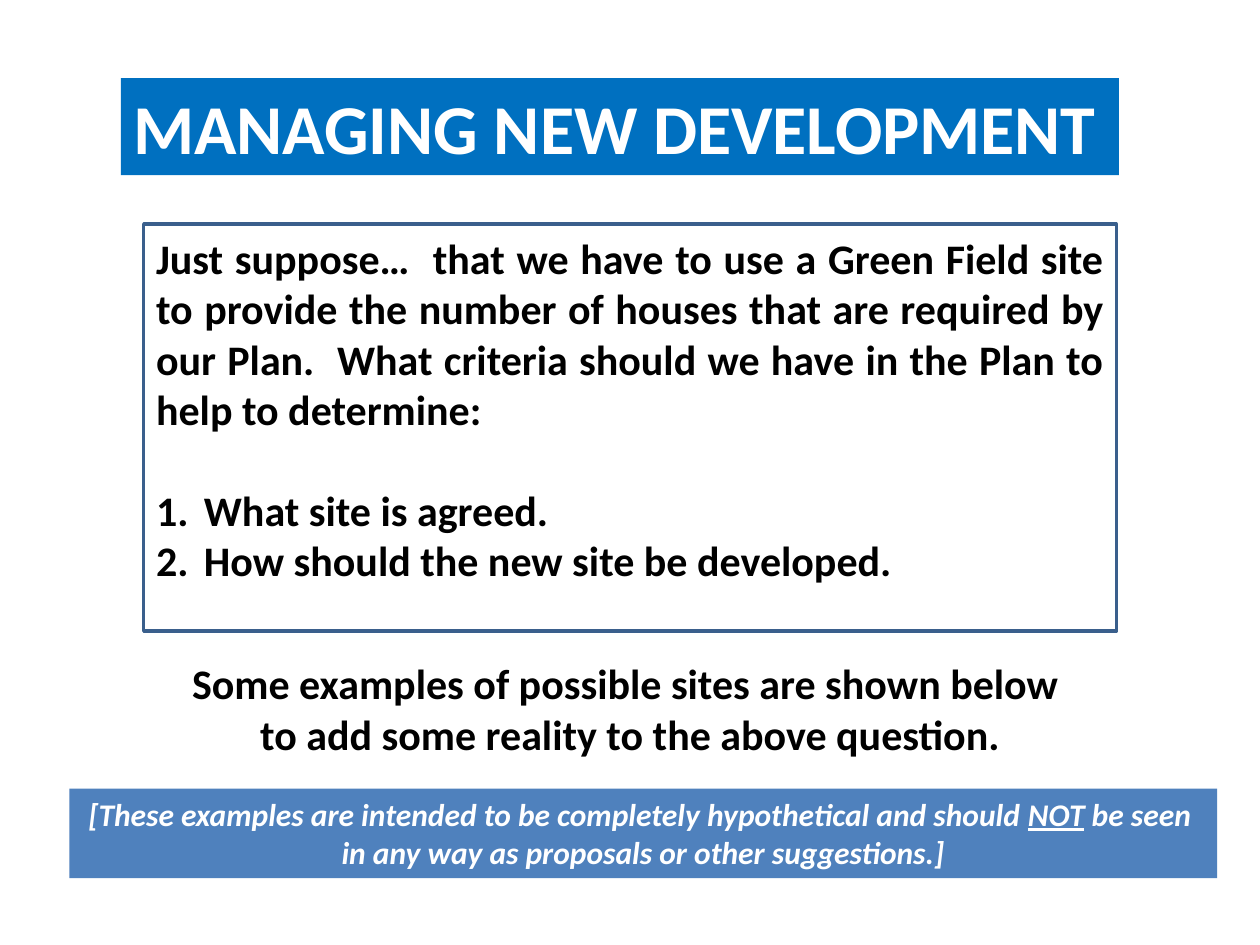
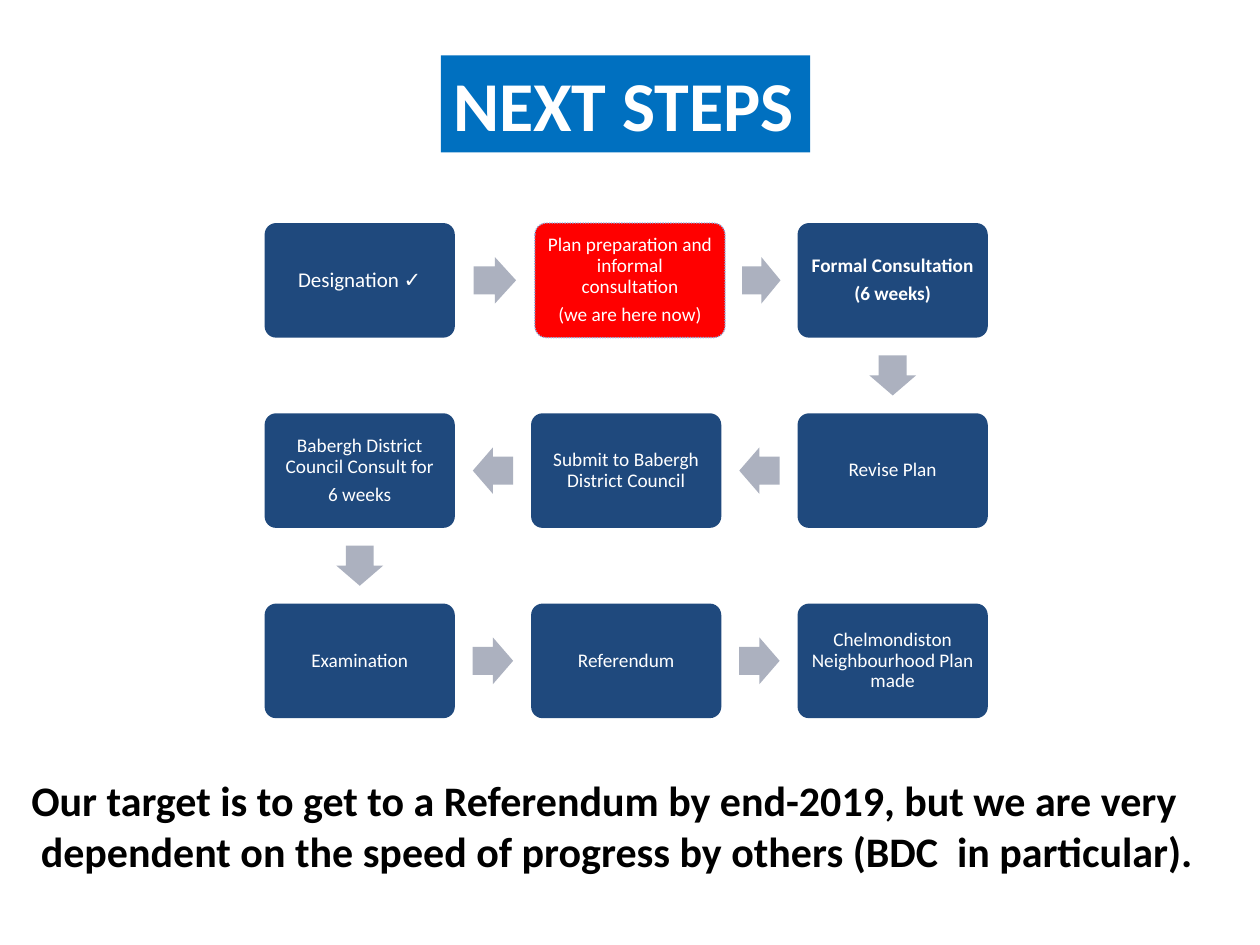
import pptx
import pptx.util
import pptx.dml.color
import pptx.enum.dml
import pptx.enum.shapes
import pptx.enum.text
import pptx.oxml

Inches, Pt = pptx.util.Inches, pptx.util.Pt
RGBColor = pptx.dml.color.RGBColor
SHAPE = pptx.enum.shapes.MSO_SHAPE
ALIGN = pptx.enum.text.PP_ALIGN
ANCHOR = pptx.enum.text.MSO_ANCHOR

FONT = "Calibri"
WHITE = RGBColor(0xFF, 0xFF, 0xFF)
BLACK = RGBColor(0, 0, 0)
TITLE_BLUE = RGBColor(0x00, 0x70, 0xC0)
NOTE_BLUE = RGBColor(0x4F, 0x81, 0xBD)
FRAME_BLUE = RGBColor(0x3A, 0x5F, 0x8C)
STEP_BLUE = RGBColor(0x1F, 0x49, 0x7D)
CURRENT_RED = RGBColor(0xFF, 0, 0)
CURRENT_LINE = RGBColor(0x8E, 0xB4, 0xE3)
ARROW_GREY = RGBColor(0xAC, 0xB1, 0xBF)

STEP_W, STEP_H = 1.51, 0.91
ARROW_BREADTH = 0.37
ARROW_SHARE = 0.53  # arrow length as a share of the gap it crosses

# Steps in order: column shift, font size, bold, paragraphs
STEPS = [
    (0, 12, False, ["Designation ✓"]),
    (0.03, 11, False, ["Plan preparation and informal consultation", "(we are here now)"]),
    (0, 11, True, ["Formal Consultation", "(6 weeks)"]),
    (0, 11, False, ["Revise Plan"]),
    (0, 11, False, ["Submit to Babergh District Council"]),
    (0, 11, False, ["Babergh District Council Consult for", "6 weeks"]),
    (0, 11, False, ["Examination"]),
    (0, 11, False, ["Referendum"]),
    (0, 11, False, ["Chelmondiston Neighbourhood Plan made"]),
]
CURRENT_STEP = 1


def add_box(slide, kind, box, fill=None):
    s = slide.shapes.add_shape(kind, *[Inches(v) for v in box])
    s.shadow.inherit = False
    s.line.fill.background()
    if fill is None:
        s.fill.background()
    else:
        s.fill.solid()
        s.fill.fore_color.rgb = fill
    return s


def add_run(p, text, size, color, bold=True, italic=False, underline=False):
    r = p.add_run()
    r.text = text
    f = r.font
    f.name, f.size, f.bold = FONT, Pt(size), bold
    f.italic, f.underline = italic, underline
    f.color.rgb = color


def write(s, lines, size, color, align=ALIGN.LEFT, anchor=ANCHOR.TOP, bold=True):
    """Fill a shape with one paragraph for each line of text."""
    tf = s.text_frame
    tf.word_wrap = True
    tf.vertical_anchor = anchor
    for i, line in enumerate(lines):
        p = tf.paragraphs[0] if i == 0 else tf.add_paragraph()
        p.alignment = align
        add_run(p, line, size, color, bold)
    return tf


def add_title(slide, text, box):
    write(add_box(slide, SHAPE.RECTANGLE, box, TITLE_BLUE), [text], 40, WHITE)


def add_statement(slide, lines, box, align):
    s = slide.shapes.add_textbox(*[Inches(v) for v in box])
    write(s, lines, 24, BLACK, align)


def number_paragraph(p):
    pPr = p._p.get_or_add_pPr()
    pPr.set("marL", str(Inches(0.38)))
    pPr.set("indent", str(-Inches(0.38)))
    pPr.append(pptx.oxml.parse_xml(
        '<a:buAutoNum xmlns:a="http://schemas.openxmlformats.org/drawingml/2006/main"'
        ' type="arabicPeriod"/>'))


def add_question(slide, box):
    s = add_box(slide, SHAPE.RECTANGLE, box)
    s.line.color.rgb = FRAME_BLUE
    s.line.width = Pt(2)
    tf = write(s, [
        "Just suppose…  that we have to use a Green Field site to provide the number "
        "of houses that are required by our Plan.  What criteria should we have in "
        "the Plan to help to determine: ",
        "What site is agreed.",
        "How should the new site be developed.",
    ], 24, BLACK, ALIGN.JUSTIFY, ANCHOR.MIDDLE)
    tf.margin_bottom = Inches(0.35)
    tf.paragraphs[0].space_after = Pt(29)
    for p in tf.paragraphs[1:]:
        number_paragraph(p)


def add_disclaimer(slide, box):
    tf = add_box(slide, SHAPE.RECTANGLE, box, NOTE_BLUE).text_frame
    tf.word_wrap = True
    tf.vertical_anchor = ANCHOR.TOP
    lines = [
        ["[These examples are intended to be completely hypothetical and should ",
         "NOT", " be seen "],
        ["in any way as proposals or other suggestions.]"],
    ]
    for i, parts in enumerate(lines):
        p = tf.paragraphs[0] if i == 0 else tf.add_paragraph()
        p.alignment = ALIGN.CENTER
        for part in parts:
            add_run(p, part, 18, WHITE, italic=True, underline=part == "NOT")


def add_step(slide, x, y, size, bold, lines, current):
    s = add_box(slide, SHAPE.ROUNDED_RECTANGLE, (x, y, STEP_W, STEP_H),
                CURRENT_RED if current else STEP_BLUE)
    s.adjustments[0] = 0.1
    if current:
        s.line.color.rgb = CURRENT_LINE
        s.line.width = Pt(0.75)
        s.line.dash_style = pptx.enum.dml.MSO_LINE.ROUND_DOT
    tf = write(s, lines, size, WHITE, ALIGN.CENTER, ANCHOR.MIDDLE, bold)
    tf.margin_left = tf.margin_right = Inches(0.07)
    tf.margin_top = tf.margin_bottom = Inches(0.07)
    for p in tf.paragraphs:
        p.line_spacing = 0.9
        p.space_after = Pt(4)


def add_arrow(slide, start, end):
    """Block arrow in the middle of the gap between two neighbouring steps."""
    dx, dy = end[0] - start[0], end[1] - start[1]
    if dy:
        angle, gap = 90, dy - STEP_H
    else:
        angle, gap = (0 if dx > 0 else 180), abs(dx) - STEP_W
    length = ARROW_SHARE * gap
    cx = (start[0] + end[0] + STEP_W) / 2
    cy = (start[1] + end[1] + STEP_H) / 2
    s = add_box(slide, SHAPE.RIGHT_ARROW,
                (cx - length / 2, cy - ARROW_BREADTH / 2, length, ARROW_BREADTH),
                ARROW_GREY)
    s.adjustments[0], s.adjustments[1] = 0.6, 0.5
    s.rotation = angle


def add_flow(slide, box):
    """Three by three steps, each row running against the one above."""
    x, y, w, h = box
    pitch_x, pitch_y = (w - STEP_W) / 2, (h - STEP_H) / 2
    previous = None
    for i, (shift, size, bold, lines) in enumerate(STEPS):
        row, col = divmod(i, 3)
        if row % 2:
            col = 2 - col
        place = (x + col * pitch_x + shift, y + row * pitch_y)
        if previous:
            add_arrow(slide, previous, place)
        add_step(slide, *place, size, bold, lines, i == CURRENT_STEP)
        previous = place


def build_development(slide):
    add_title(slide, "MANAGING NEW DEVELOPMENT", (0.96, 0.62, 7.92, 0.77))
    add_question(slide, (1.14, 1.78, 7.72, 3.23))
    add_disclaimer(slide, (0.55, 6.26, 9.11, 0.71))
    add_statement(slide, ["Some examples of possible sites are shown below ",
                          "to add some reality to the above question."],
                  (1.39, 5.17, 7.22, 1.21), ALIGN.CENTER)


def build_next_steps(slide):
    add_title(slide, "NEXT STEPS", (3.5, 0.44, 2.93, 0.77))
    add_flow(slide, (2.1, 1.77, 5.74, 3.93))
    add_statement(slide, ["Our target is to get to a Referendum by end-2019, but we are very",
                          " dependent on the speed of progress by others (BDC  in particular)."],
                  (0.15, 6.1, 9.68, 0.91), ALIGN.LEFT)


def main():
    prs = pptx.Presentation()
    prs.slide_width, prs.slide_height = Inches(10), Inches(7.5)
    for build in (build_development, build_next_steps):
        build(prs.slides.add_slide(prs.slide_layouts[6]))
    prs.save("out.pptx")


if __name__ == "__main__":
    main()
